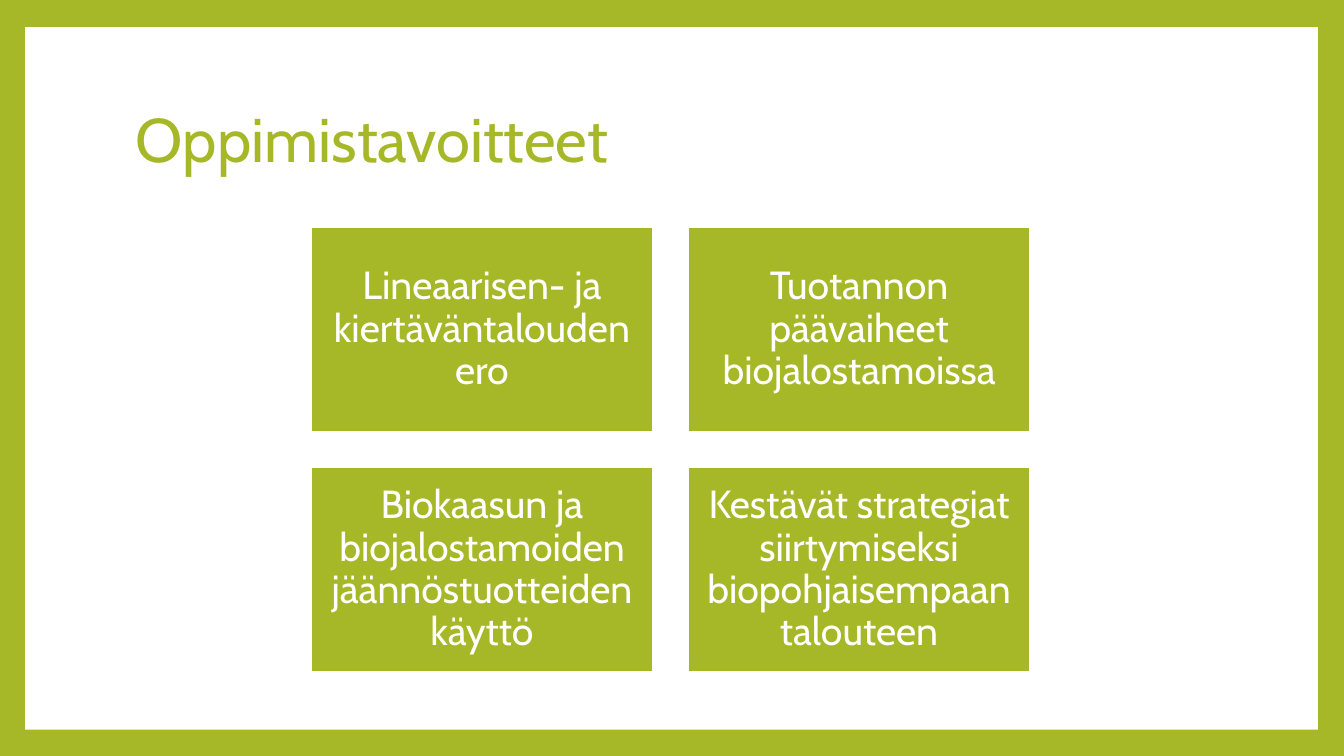
from dataclasses import dataclass

from pptx import Presentation
from pptx import util as u
from pptx.dml.color import RGBColor
from pptx.enum import shapes, text
from pptx.shapes.autoshape import Shape
from pptx.slide import Slide

GREEN = "A6B727"
WHITE = "FFFFFF"
FONT = "Cabin"

COLUMNS = 2
CARD_LEFT, CARD_TOP = 3.08, 2.25
CARD_WIDTH, CARD_HEIGHT = 3.4, 2.04
CARD_GAP = 0.34

GOALS = [
    "Lineaarisen- ja kiertäväntalouden ero",
    "Tuotannon päävaiheet biojalostamoissa",
    "Biokaasun ja biojalostamoiden jäännöstuotteiden käyttö",
    "Kestävät strategiat siirtymiseksi biopohjaisempaan talouteen",
]


@dataclass(frozen=True)
class Area:
    left: float
    top: float
    width: float
    height: float

    def lengths(self) -> list[u.Length]:
        return [u.Inches(n) for n in (self.left, self.top, self.width, self.height)]


@dataclass(frozen=True)
class Card:
    area: Area
    goal: str


def color(value: str) -> RGBColor:
    return RGBColor.from_string(value)


def add_rectangle(page: Slide, area: Area, fill: str, outline: str | None = None) -> Shape:
    box = page.shapes.add_shape(shapes.MSO_SHAPE.RECTANGLE, *area.lengths())
    box.shadow.inherit = False
    box.fill.solid()
    box.fill.fore_color.rgb = color(fill)
    if outline:
        box.line.color.rgb = color(outline)
        box.line.width = u.Pt(1.5)
    else:
        box.line.fill.background()
    return box


def write(box: Shape, words: str, *, size: float, ink: str,
          align: text.PP_ALIGN = text.PP_ALIGN.LEFT,
          side_inset: float = 0.1, end_inset: float = 0.05) -> None:
    """Fill a shape with one vertically centred paragraph."""
    frame = box.text_frame
    frame.word_wrap = True
    frame.vertical_anchor = text.MSO_ANCHOR.MIDDLE
    frame.margin_left = frame.margin_right = u.Inches(side_inset)
    frame.margin_top = frame.margin_bottom = u.Inches(end_inset)
    para = frame.paragraphs[0]
    para.alignment = align
    para.line_spacing = 0.9
    span = para.add_run()
    span.text = words
    span.font.name = FONT
    span.font.size = u.Pt(size)
    span.font.color.rgb = color(ink)


def goal_cards() -> list[Card]:
    cards = []
    for index, goal in enumerate(GOALS):
        row, column = divmod(index, COLUMNS)
        area = Area(CARD_LEFT + column * (CARD_WIDTH + CARD_GAP),
                    CARD_TOP + row * (CARD_HEIGHT + CARD_GAP),
                    CARD_WIDTH, CARD_HEIGHT)
        cards.append(Card(area, goal))
    return cards


def draw_card(page: Slide, card: Card) -> None:
    box = add_rectangle(page, card.area, GREEN, WHITE)
    write(box, card.goal, size=28, ink=WHITE, align=text.PP_ALIGN.CENTER,
          side_inset=0.12, end_inset=0.12)


def main() -> None:
    deck = Presentation()
    deck.slide_width, deck.slide_height = u.Inches(13.33), u.Inches(7.5)
    page = deck.slides.add_slide(deck.slide_layouts[6])
    page.background.fill.solid()
    page.background.fill.fore_color.rgb = color(GREEN)

    add_rectangle(page, Area(0.25, 0.27, 12.82, 6.97), WHITE)
    title = page.shapes.add_textbox(*Area(1.25, 0.67, 10.8, 1.48).lengths())
    write(title, "Oppimistavoitteet", size=44, ink=GREEN)
    for card in goal_cards():
        draw_card(page, card)

    deck.save("out.pptx")


if __name__ == "__main__":
    main()
